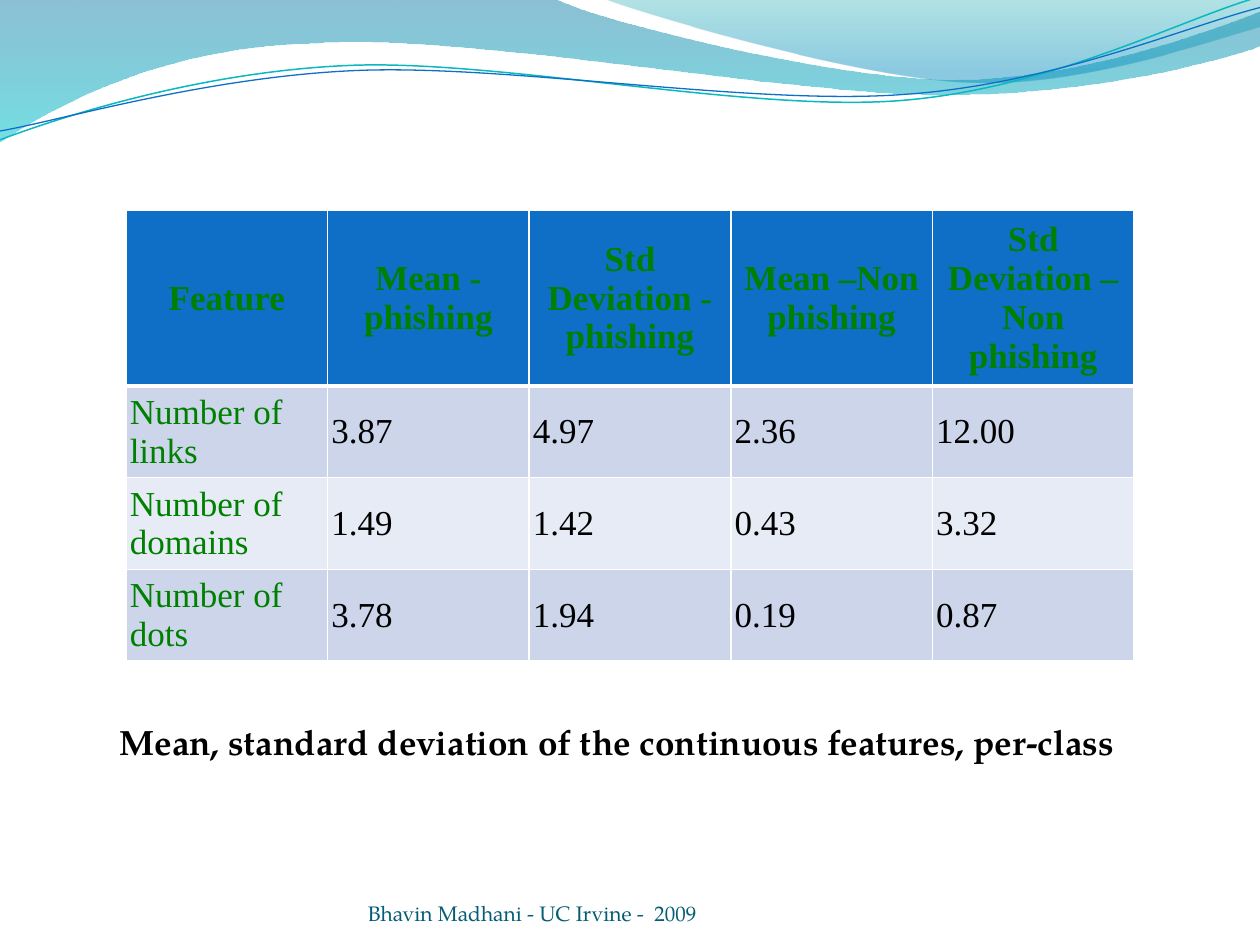
from dataclasses import dataclass

from lxml import etree
from pptx import Presentation
from pptx.dml.color import RGBColor
from pptx.enum.text import MSO_ANCHOR, PP_ALIGN
from pptx.oxml.ns import qn
from pptx.util import Inches, Pt

MIDDLE, BOTTOM = MSO_ANCHOR.MIDDLE, MSO_ANCHOR.BOTTOM
CENTER, LEFT = PP_ALIGN.CENTER, PP_ALIGN.LEFT


@dataclass(frozen=True)
class Theme:
    header: str = "0F6FC6"
    bands: tuple = ("CCD5EA", "E7EBF5")
    label: str = "008000"
    ink: str = "000000"
    border: str = "FFFFFF"
    footer: str = "045D75"
    teal_line: str = "0AB8BF"
    blue_line: str = "0F6FC6"
    # Gradient stops: position, colour, opacity in percent
    wide_wave: tuple = ((0, "0074A1", 45), (1, "00C6CF", 55))
    right_wave: tuple = ((0, "00A1A9", 30), (0.8, "008BBF", 45))
    table_font: str = "Times New Roman"
    text_font: str = "TeX Gyre Pagella"
    body_size: int = 20
    footer_size: int = 12


THEME = Theme()

# Wave outlines: a start point, then line ends (2 numbers) or Bezier curves (6)
WIDE_WAVE = [
    (0, 0), (4.4, -0.01),
    (4.76, 0.17, 6.64, 0.63, 7.58, 0.63), (8.53, 0.63, 9.58, 0.26, 10, 0.09),
    (10.01, 0.36),
    (9.83, 0.44, 8.7, 0.76, 7.46, 0.75), (6.22, 0.75, 3.82, 0.28, 2.57, 0.34),
    (1.29, 0.36, 0.46, 0.83, -0.01, 1.13),
]
RIGHT_WAVE = [
    (4.79, -0.01),
    (5.09, 0.11, 6.82, 0.62, 7.69, 0.65), (8.56, 0.69, 9.61, 0.32, 10, 0.21),
    (10, 0),
]
TEAL_CURVE = [
    (0, 1.11),
    (0.48, 0.93, 1.58, 0.57, 2.77, 0.52), (3.95, 0.47, 5.93, 0.89, 7.13, 0.8),
    (8.33, 0.71, 9.38, 0.15, 9.98, -0.02),
]
BLUE_CURVE = [
    (0, 1.04),
    (0.47, 0.96, 1.64, 0.61, 2.83, 0.56), (4.03, 0.51, 5.97, 0.84, 7.17, 0.75),
    (8.36, 0.67, 9.41, 0.21, 10, 0.06),
]

FEATURES = [
    ["Feature", "Mean - phishing", "Std Deviation - phishing",
     "Mean –Non phishing", "Std Deviation – Non phishing"],
    ["Number of links", "3.87", "4.97", "2.36", "12.00"],
    ["Number of domains", "1.49", "1.42", "0.43", "3.32"],
    ["Number of dots", "3.78", "1.94", "0.19", "0.87"],
]


def add_outline(slide, outline, left, top, closed):
    points = [(left + Inches(segment[i]), top + Inches(segment[i + 1]))
              for segment in outline for i in range(0, len(segment), 2)]
    builder = slide.shapes.build_freeform(*points[0])
    builder.add_line_segments(points[1:], close=closed)
    shape = builder.convert_to_shape()
    shape.shadow.inherit = False
    # Join each curve's three points into one Bezier segment
    lines = iter(list(shape._element.iter(qn("a:lnTo"))))
    for segment in outline[1:]:
        first = next(lines)
        if len(segment) == 6:
            first.tag = qn("a:cubicBezTo")
            for _ in range(2):
                line = next(lines)
                first.append(line[0])
                line.getparent().remove(line)
    return shape


def add_waves(slide, left, top):
    # Translucent gradient bands
    for outline, stops in ((WIDE_WAVE, THEME.wide_wave), (RIGHT_WAVE, THEME.right_wave)):
        wave = add_outline(slide, outline, left, top, closed=True)
        wave.line.fill.background()
        wave.fill.gradient()
        wave.fill.gradient_angle = 270
        for stop, (position, color, _) in zip(wave.fill.gradient_stops, stops):
            stop.position = position
            stop.color.rgb = RGBColor.from_string(color)
        colors = wave._element.spPr.iter(qn("a:srgbClr"))
        for color, (_, _, opacity) in zip(list(colors), stops):
            etree.SubElement(color, qn("a:alpha"), val=str(opacity * 1000))
    # Thin curves
    for outline, color, width in ((TEAL_CURVE, THEME.teal_line, 0.85),
                                  (BLUE_CURVE, THEME.blue_line, 0.75)):
        curve = add_outline(slide, outline, left, top, closed=False)
        curve.fill.background()
        curve.line.color.rgb = RGBColor.from_string(color)
        curve.line.width = Pt(width)


def style_text(paragraph, font, size, color, bold=False, align=LEFT):
    paragraph.alignment = align
    for run in paragraph.runs:
        run.font.name = font
        run.font.size = Pt(size)
        run.font.bold = bold
        run.font.color.rgb = RGBColor.from_string(color)


def set_borders(cell, bottom_width):
    properties = cell._tc.get_or_add_tcPr()
    for side, width in (("L", 1), ("R", 1), ("T", 1), ("B", bottom_width)):
        line = etree.SubElement(properties, qn(f"a:ln{side}"), w=str(Pt(width)))
        fill = etree.SubElement(line, qn("a:solidFill"))
        etree.SubElement(fill, qn("a:srgbClr"), val=THEME.border)


def add_feature_table(slide, left, top, width, height):
    rows, columns = len(FEATURES), len(FEATURES[0])
    # Rows start at zero height and grow to fit their text
    frame = slide.shapes.add_table(rows, columns, left, top, width, Inches(0))
    frame.height = height
    table = frame.table
    for r, values in enumerate(FEATURES):
        is_header = r == 0
        for c, value in enumerate(values):
            cell = table.cell(r, c)
            cell.text_frame.text = value
            cell.vertical_anchor = MIDDLE
            cell.margin_left = cell.margin_right = Inches(0.03)
            cell.margin_top = cell.margin_bottom = Inches(0.03)
            set_borders(cell, 3 if is_header else 1)
            cell.fill.solid()
            cell.fill.fore_color.rgb = RGBColor.from_string(
                THEME.header if is_header else THEME.bands[(r - 1) % 2])
            style_text(cell.text_frame.paragraphs[0], THEME.table_font, THEME.body_size,
                       THEME.label if is_header or c == 0 else THEME.ink,
                       bold=is_header, align=CENTER if is_header else LEFT)


def add_caption(slide, left, top, width, height):
    frame = slide.shapes.add_textbox(left, top, width, height).text_frame
    frame.word_wrap = True
    frame.text = "Mean, standard deviation of the continuous features, per-class"
    caption = frame.paragraphs[0]
    caption._p.get_or_add_pPr().set("marL", str(Inches(0.35)))
    style_text(caption, THEME.text_font, THEME.body_size, THEME.ink, bold=True)


def add_footer(slide, left, top, width, height):
    frame = slide.shapes.add_textbox(left, top, width, height).text_frame
    frame.word_wrap = True
    frame.vertical_anchor = BOTTOM
    frame.margin_left = frame.margin_right = frame.margin_top = frame.margin_bottom = 0
    frame.text = "Bhavin Madhani - UC Irvine -  2009"
    style_text(frame.paragraphs[0], THEME.text_font, THEME.footer_size, THEME.footer)


def main():
    deck = Presentation()
    deck.slide_width, deck.slide_height = Inches(10), Inches(7.5)
    slide = deck.slides.add_slide(deck.slide_layouts[6])
    add_waves(slide, Inches(0), Inches(0))
    add_caption(slide, Inches(0.5), Inches(5.67), Inches(9), Inches(0.75))
    add_footer(slide, Inches(2.92), Inches(6.95), Inches(3.67), Inches(0.4))
    add_feature_table(slide, Inches(1), Inches(1.67), Inches(8), Inches(3.56))
    deck.save("out.pptx")


if __name__ == "__main__":
    main()
